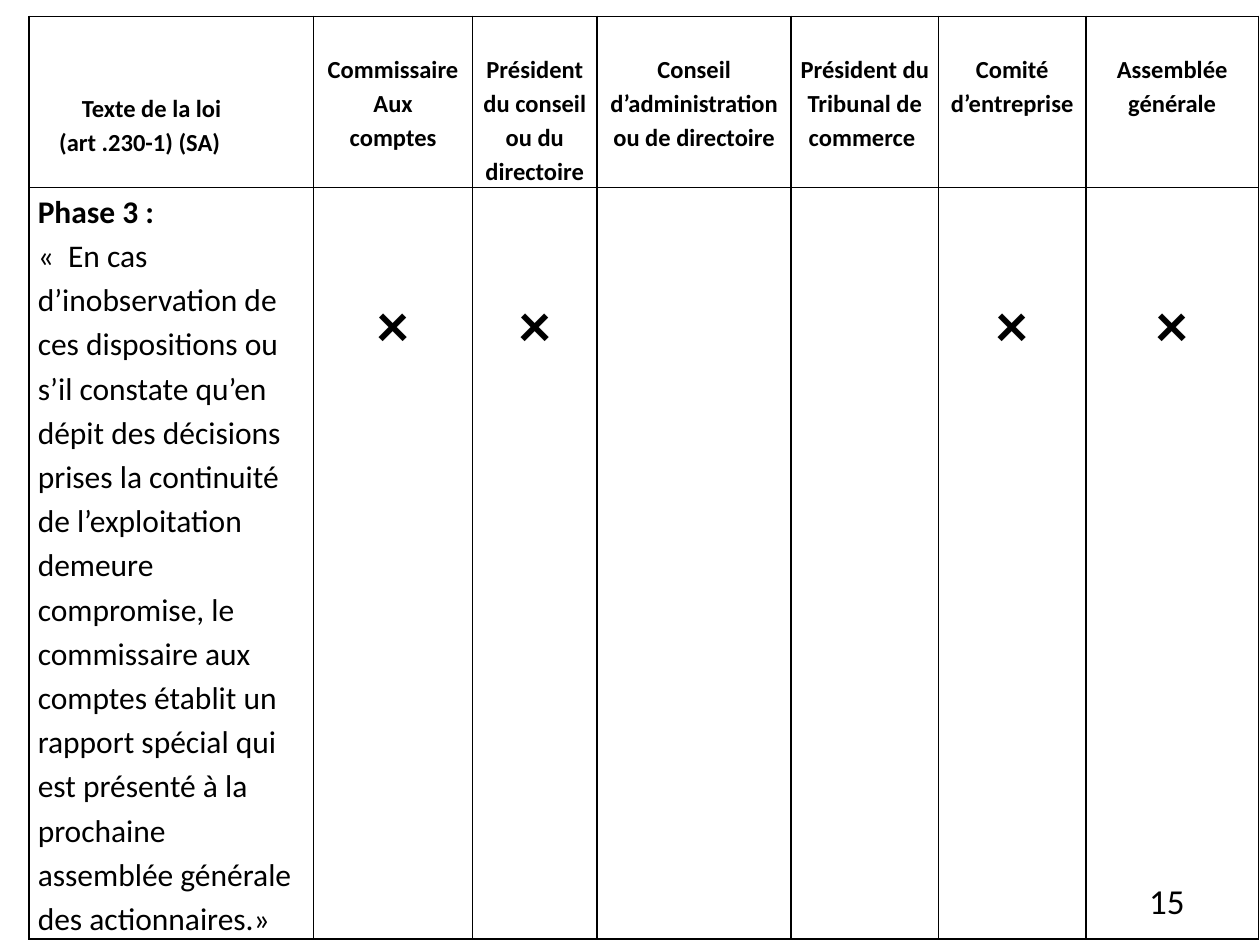
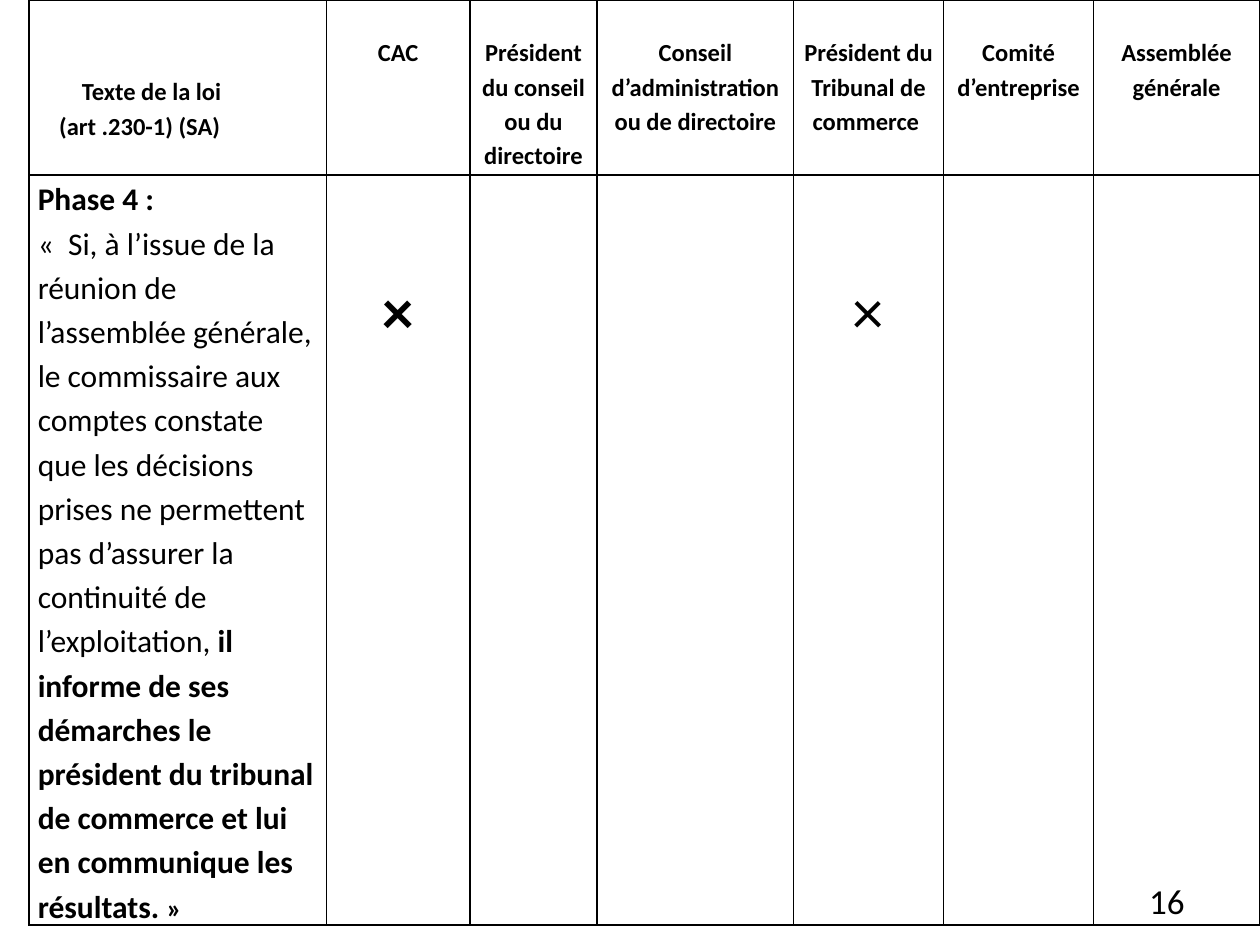
from lxml import etree
from pptx import Presentation
from pptx.dml.color import RGBColor
from pptx.enum import text
from pptx.oxml import ns
from pptx.util import Inches, Pt

BLACK = RGBColor(0x00, 0x00, 0x00)
FONT = "Calibri"
LINE_SPACING = 1.15
TABLE_LEFT = 0.23
SIDE_MARGIN = 0.07
HEADER_SIZE, BODY_SIZE, MARK_SIZE, PAGE_SIZE = 14, 18, 36, 20
# Distance from the top of a cell to its first line
LAW_TOP, HEADER_TOP, MARK_TOP = 0.58, 0.27, 0.7

LAW_LINES = [("Texte de la loi", 0.35), ("(art .230-1) (SA)", 0.17)]
SHARED_HEADERS = [
    "Président du conseil ou du directoire",
    "Conseil d’administration ou de directoire",
    "Président du Tribunal de commerce ",
    "Comité d’entreprise",
    "Assemblée\ngénérale",
]

# Each phase: runs are (text, bold, size); marks map a column to its bold flag
PHASES = [
    {
        "page": "15",
        "top": 0.13,
        "columns": [2.26, 1.26, 0.99, 1.54, 1.17, 1.17, 1.37],
        "rows": [1.22, 5.89],
        "auditor": "Commissaire\nAux\ncomptes",
        "title": "Phase 3 :",
        "runs": [
            ("«  En cas d’inobservation de ces dispositions ou s’il constate "
             "qu’en dépit des décisions prises la continuité de l’exploitation "
             "demeure compromise, le commissaire aux comptes établit un rapport "
             "spécial qui est présenté à la prochaine assemblée générale des "
             "actionnaires.»", False, BODY_SIZE),
        ],
        "marks": {1: True, 2: True, 5: True, 6: True},
    },
    {
        "page": "16",
        "top": 0,
        "columns": [2.36, 1.14, 1.01, 1.56, 1.19, 1.19, 1.32],
        "rows": [1.39, 5.95],
        "auditor": "CAC",
        "title": "Phase 4 :",
        "runs": [
            ("«  Si, à l’issue de la réunion de l’assemblée générale, le "
             "commissaire aux comptes constate que les décisions prises ne "
             "permettent pas d’assurer la continuité de l’exploitation, ",
             False, BODY_SIZE),
            ("il informe de ses démarches le président du tribunal de commerce "
             "et lui en communique les résultats. ", True, BODY_SIZE),
            ("»", True, 16),
        ],
        "marks": {1: True, 4: False},
    },
]


def style_run(run, size, bold):
    run.font.name = FONT
    run.font.size = Pt(size)
    run.font.bold = bold
    run.font.color.rgb = BLACK


def style_paragraphs(text_frame, size, bold, alignment):
    for paragraph in text_frame.paragraphs:
        paragraph.alignment = alignment
        paragraph.line_spacing = LINE_SPACING
        for run in paragraph.runs:
            style_run(run, size, bold)


def format_cell(cell):
    """Clear the fill, set the margins and draw a black border all round."""
    cell.fill.background()
    cell.margin_left = cell.margin_right = Inches(SIDE_MARGIN)
    cell.margin_top = cell.margin_bottom = 0
    properties = cell._tc.get_or_add_tcPr()
    for position, side in enumerate(("lnL", "lnR", "lnT", "lnB")):
        line = etree.Element(ns.qn(f"a:{side}"), w=str(Pt(1)))
        fill = etree.SubElement(line, ns.qn("a:solidFill"))
        etree.SubElement(fill, ns.qn("a:srgbClr"), val=str(BLACK))
        properties.insert(position, line)


def fill_centred(cell, content, size, top, bold=True):
    cell.margin_top = Inches(top)
    cell.text_frame.text = content
    style_paragraphs(cell.text_frame, size, bold, text.PP_ALIGN.CENTER)


def fill_law_header(cell):
    cell.margin_top = Inches(LAW_TOP)
    cell.text_frame.text = "\n".join(line for line, _ in LAW_LINES)
    style_paragraphs(cell.text_frame, HEADER_SIZE, True, text.PP_ALIGN.LEFT)
    for paragraph, (_, indent) in zip(cell.text_frame.paragraphs, LAW_LINES):
        paragraph._p.get_or_add_pPr().set("marL", str(Inches(indent)))


def fill_law_text(cell, title, runs):
    cell.text_frame.text = title
    body = cell.text_frame.add_paragraph()
    style_paragraphs(cell.text_frame, BODY_SIZE, True, text.PP_ALIGN.LEFT)
    for content, bold, size in runs:
        run = body.add_run()
        run.text = content
        style_run(run, size, bold)


def add_phase_table(slide, phase):
    columns, rows = phase["columns"], phase["rows"]
    table = slide.shapes.add_table(
        len(rows), len(columns), Inches(TABLE_LEFT), Inches(phase["top"]),
        Inches(sum(columns)), Inches(sum(rows))).table
    table.first_row = table.horz_banding = False
    for column, width in zip(table.columns, columns):
        column.width = Inches(width)
    for row, height in zip(table.rows, rows):
        row.height = Inches(height)
    for cell in table.iter_cells():
        format_cell(cell)

    # Header row
    fill_law_header(table.cell(0, 0))
    for index, header in enumerate([phase["auditor"], *SHARED_HEADERS], 1):
        fill_centred(table.cell(0, index), header, HEADER_SIZE, HEADER_TOP)

    # Law text and the parties concerned
    fill_law_text(table.cell(1, 0), phase["title"], phase["runs"])
    for index, bold in phase["marks"].items():
        fill_centred(table.cell(1, index), "×", MARK_SIZE, MARK_TOP, bold)


def add_page_number(slide, number):
    box = slide.shapes.add_textbox(
        Inches(7.17), Inches(6.95), Inches(2.33), Inches(0.4))
    text_frame = box.text_frame
    text_frame.word_wrap = True
    text_frame.vertical_anchor = text.MSO_ANCHOR.MIDDLE
    text_frame.text = number
    paragraph = text_frame.paragraphs[0]
    paragraph.alignment = text.PP_ALIGN.RIGHT
    style_run(paragraph.runs[0], PAGE_SIZE, False)


def main():
    presentation = Presentation()
    presentation.slide_width = Inches(10)
    presentation.slide_height = Inches(7.5)
    blank_layout = presentation.slide_layouts[6]
    for phase in PHASES:
        slide = presentation.slides.add_slide(blank_layout)
        add_phase_table(slide, phase)
        add_page_number(slide, phase["page"])
    presentation.save("out.pptx")


if __name__ == "__main__":
    main()
